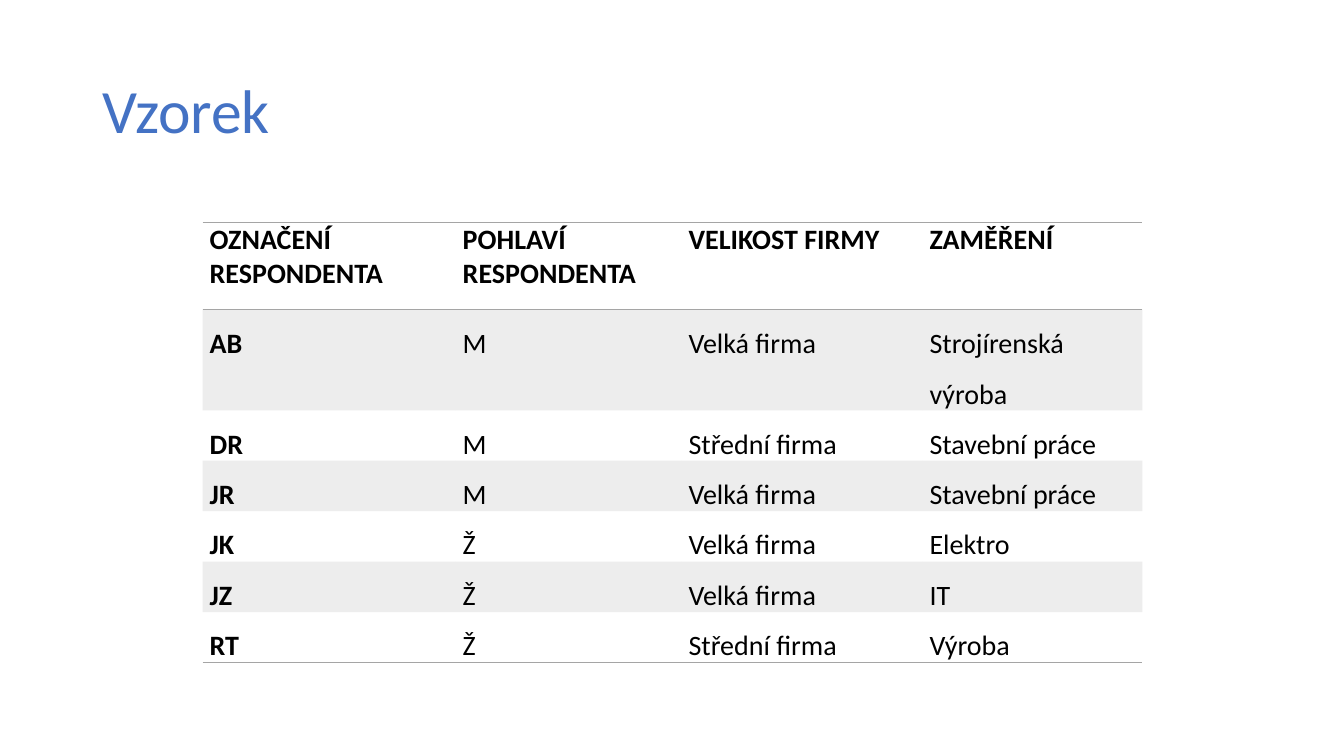
from lxml import etree
from pptx import Presentation
from pptx import util as u
from pptx.dml import color
from pptx.enum import text
from pptx.oxml import ns

PX = 9144
COLORS = {"title": "4472C4", "body": "000000", "grey": "A5A5A5"}
PLAIN_STYLE = "{2D5ABB26-0587-4C30-8999-92F81FD0307C}"
COLUMNS = [251, 224, 239, 218]
ROWS = [86, 94] + [47] * 5
RESPONDENTS = [
    ("OZNAČENÍ RESPONDENTA", "POHLAVÍ RESPONDENTA", "VELIKOST FIRMY", "ZAMĚŘENÍ"),
    ("AB", "M", "Velká firma", "Strojírenská výroba"),
    ("DR", "M", "Střední firma", "Stavební práce"),
    ("JR", "M", "Velká firma", "Stavební práce"),
    ("JK", "Ž", "Velká firma", "Elektro"),
    ("JZ", "Ž", "Velká firma", "IT"),
    ("RT", "Ž", "Střední firma", "Výroba"),
]


def px(*lengths):
    """Turn pixel lengths into a list of EMU lengths."""
    return [u.Emu(length * PX) for length in lengths]


def rgb(name):
    """Look up a named colour."""
    return color.RGBColor.from_string(COLORS[name])


def apply(target, values):
    """Set each attribute in a dict of format values."""
    for name, value in values.items():
        setattr(target, name, value)


def write(frame, words, tint, para_format, font_format):
    """Put one formatted paragraph into a text frame."""
    para = frame.paragraphs[0]
    apply(para, para_format)
    span = para.add_run()
    span.text = words
    apply(span.font, {"name": "Calibri", **font_format})
    span.font.color.rgb = rgb(tint)


def add_title(page, words):
    """Add the slide title."""
    box = page.shapes.add_textbox(*px(92, 40, 1150, 145))
    apply(box.text_frame, {"word_wrap": True, "vertical_anchor": text.MSO_ANCHOR.MIDDLE})
    write(box.text_frame, words, "title", {"line_spacing": 0.9}, {"size": u.Pt(44)})


def add_rule(properties, side):
    """Draw a thin grey border on one side of a cell."""
    line = etree.SubElement(properties, ns.qn(f"a:{side}"), w=str(u.Pt(1)))
    fill = etree.SubElement(line, ns.qn("a:solidFill"))
    etree.SubElement(fill, ns.qn("a:srgbClr"), val=COLORS["grey"])


def shade(cell, properties):
    """Fill a cell with translucent grey."""
    cell.fill.solid()
    cell.fill.fore_color.rgb = rgb("grey")
    tint = properties.find(f"{ns.qn('a:solidFill')}/{ns.qn('a:srgbClr')}")
    etree.SubElement(tint, ns.qn("a:alpha"), val="20000")


def format_cell(cell, words, row, column):
    """Write and style one cell according to its place in the table."""
    side, flat = px(7, 0)
    apply(cell, {"margin_left": side, "margin_right": side,
                 "margin_top": flat, "margin_bottom": flat})
    properties = cell._tc.get_or_add_tcPr()
    if row == 0:
        add_rule(properties, "lnT")
    if row in (0, len(ROWS) - 1):
        add_rule(properties, "lnB")
    if row % 2:
        shade(cell, properties)
    else:
        cell.fill.background()
    write(cell.text_frame, words, "body",
          {"alignment": text.PP_ALIGN.JUSTIFY, "line_spacing": 1.5 if row else 1.0},
          {"size": u.Pt(20), "bold": row == 0 or column == 0})


def add_respondents(page):
    """Add the table of respondents."""
    frame = page.shapes.add_table(len(ROWS), len(COLUMNS),
                                  *px(201, 221, sum(COLUMNS), sum(ROWS)))
    for style in frame.element.iter(ns.qn("a:tableStyleId")):
        style.text = PLAIN_STYLE
    table = frame.table
    apply(table, {"first_row": True, "horz_banding": False})
    for column, width in zip(table.columns, px(*COLUMNS)):
        column.width = width
    for row, height in zip(table.rows, px(*ROWS)):
        row.height = height
    for row, record in enumerate(RESPONDENTS):
        for column, words in enumerate(record):
            format_cell(table.cell(row, column), words, row, column)


def main():
    """Build the slide and save the deck."""
    deck = Presentation()
    deck.slide_width, deck.slide_height = px(1333, 750)
    page = deck.slides.add_slide(deck.slide_layouts[6])
    add_title(page, "Vzorek")
    add_respondents(page)
    deck.save("out.pptx")


if __name__ == "__main__":
    main()
